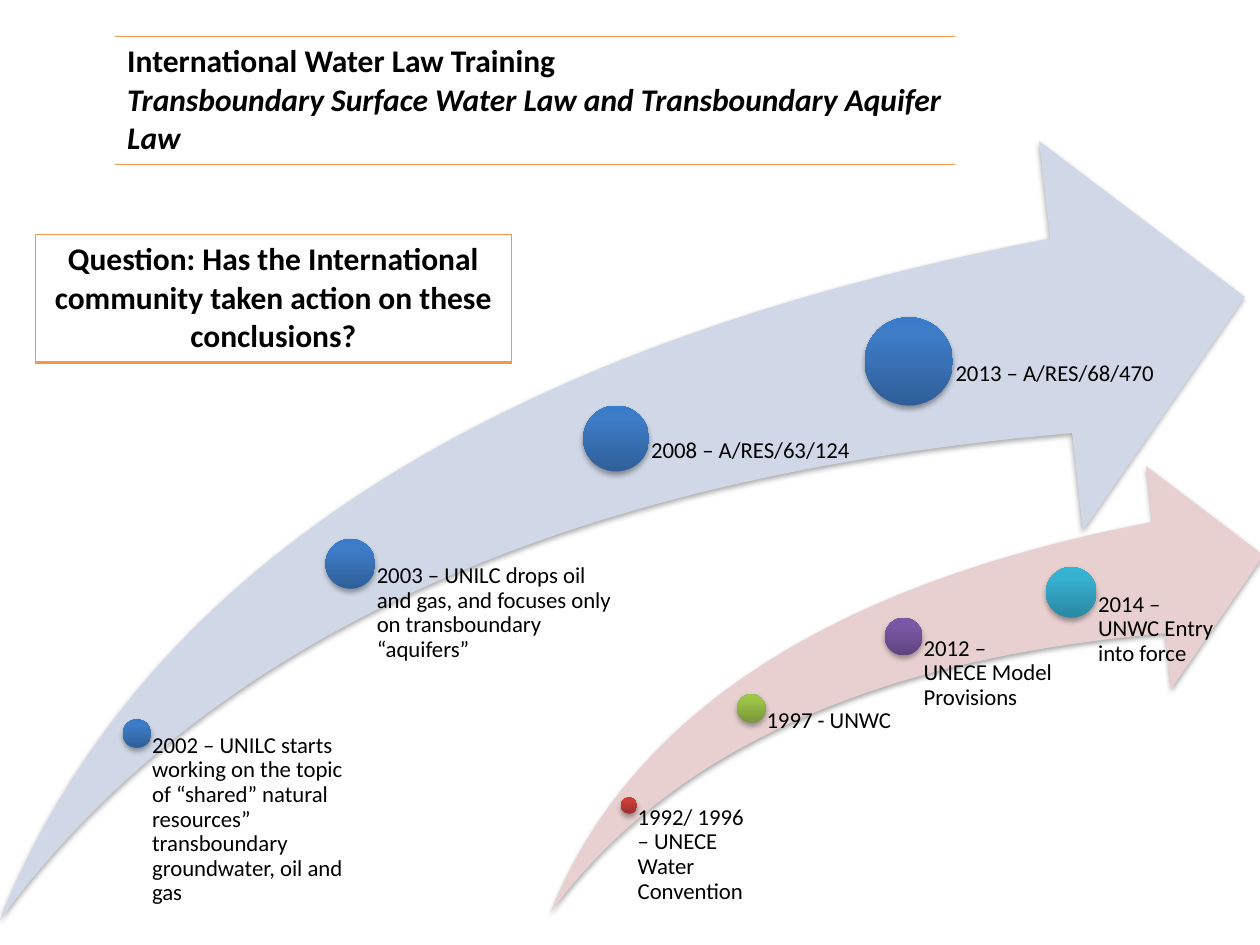
from pptx import Presentation
from pptx.dml.color import RGBColor
from pptx.enum.shapes import MSO_SHAPE as Preset
from pptx.enum.text import MSO_ANCHOR as Anchor, PP_ALIGN as Align
from pptx.oxml import parse_xml
from pptx.oxml.ns import nsdecls
from pptx.util import Inches, Pt

SLIDE_W, SLIDE_H = 10, 7.5
FONT = "Calibri"
ORANGE = "F79646"
BLUE = ("2F5F99", "3D7CC7", "3A7CCB")
RED = ("9C2F2D", "CB3E3A", "CE3B37")
GREEN = ("779737", "9BC348", "9DC746")
PURPLE = ("5F4480", "7B58A6", "7C57A8")
TEAL = ("2A88A2", "37B1D2", "34B4D6")

# Milestone rule, as shares of the arrow: centre x, centre y, dot size, label width
MILESTONES = [
    (0.11, 0.761, 0.023, 0.171),
    (0.2815, 0.543, 0.04, 0.21),
    (0.495, 0.382, 0.053, 0.21),
    (0.73, 0.283, 0.071, 0.21),
]

AQUIFER_STEPS = [
    ("2002 – UNILC starts working on the topic of “shared” natural resources” "
     "transboundary groundwater, oil and gas", BLUE),
    ("2003 – UNILC drops oil and gas, and focuses only on transboundary “aquifers”", BLUE),
    ("2008 – A/RES/63/124", BLUE),
    ("2013 – A/RES/68/470", BLUE),
]
SURFACE_STEPS = [
    ("1992/ 1996 – UNECE Water Convention", RED),
    ("1997 - UNWC", GREEN),
    ("2012 – UNECE Model Provisions", PURPLE),
    ("2014 – UNWC Entry into force", TEAL),
]


def colour(hex_code):
    """Turn a hex string into a colour."""
    return RGBColor.from_string(hex_code)


def write(paragraph, words, size, bold=None, italic=None):
    """Add one black run to a paragraph."""
    run = paragraph.add_run()
    run.text = words
    font = run.font
    font.name, font.size, font.bold, font.italic = FONT, Pt(size), bold, italic
    font.color.rgb = colour("000000")


def add_shadow(shape):
    """Give a shape a soft shadow falling straight down."""
    shape.shadow.inherit = False
    effects = shape._element.spPr.find("{*}effectLst")
    effects.append(parse_xml(
        f'<a:outerShdw {nsdecls("a")} blurRad="{Pt(3.1)}" dist="{Pt(1.8)}" dir="5400000" '
        'rotWithShape="0"><a:srgbClr val="000000"><a:alpha val="35000"/></a:srgbClr>'
        '</a:outerShdw>'))


def shade(shape, tones):
    """Fill a shape with three tones rising from its bottom edge."""
    shape.fill.gradient()
    shape.fill.gradient_angle = 90
    gradient = shape._element.spPr.find("{*}gradFill")
    stops = "".join(f'<a:gs pos="{place}000"><a:srgbClr val="{tone}"/></a:gs>'
                    for place, tone in zip((0, 80, 100), tones))
    gradient.replace(gradient.find("{*}gsLst"),
                     parse_xml(f'<a:gsLst {nsdecls("a")}>{stops}</a:gsLst>'))


def add_milestone(group, centre, dot_size, label_size, label, tones):
    """Place a dot with its label hanging from the dot's centre."""
    x, y = centre
    dot = group.shapes.add_shape(
        Preset.OVAL, *map(Inches, (x - dot_size / 2, y - dot_size / 2, dot_size, dot_size)))
    shade(dot, tones)
    dot.line.fill.background()
    add_shadow(dot)
    frame = group.shapes.add_textbox(*map(Inches, (x, y, *label_size))).text_frame
    frame.word_wrap = True
    frame.vertical_anchor = Anchor.TOP
    frame.margin_left = Inches(0.53 * dot_size)
    frame.margin_top = frame.margin_right = frame.margin_bottom = 0
    frame.paragraphs[0].line_spacing = 0.9
    write(frame.paragraphs[0], label, 13)


def add_timeline(slide, left, top, width, height, tint, steps):
    """Draw a swoosh arrow with milestones along it."""
    group = slide.shapes.add_group_shape()
    arrow = group.shapes.add_shape(
        Preset.SWOOSH_ARROW, *map(Inches, (left, top, width, height)))
    arrow.adjustments[0] = arrow.adjustments[1] = 0.25
    arrow.fill.solid()
    arrow.fill.fore_color.rgb = colour(tint)
    arrow.line.fill.background()
    add_shadow(arrow)
    for (across, down, dot, label_width), (label, tones) in zip(MILESTONES, steps):
        add_milestone(group, (left + across * width, top + down * height), dot * width,
                      (label_width * width, (1 - down) * height), label, tones)


def set_borders(cell, widths):
    """Draw the named cell edges in orange and clear the others."""
    properties = cell._tc.get_or_add_tcPr()
    for place, edge in enumerate("LRTB"):
        paint = (f'<a:solidFill><a:srgbClr val="{ORANGE}"/></a:solidFill>'
                 if edge in widths else "<a:noFill/>")
        properties.insert(place, parse_xml(
            f'<a:ln{edge} {nsdecls("a")} w="{Pt(widths.get(edge, 1))}">{paint}</a:ln{edge}>'))


def add_banner(slide, box, lines, borders, align=Align.LEFT):
    """Add a one-cell table of bold lines, each with its italic setting."""
    table = slide.shapes.add_table(1, 1, *map(Inches, box)).table
    table.first_row = table.horz_banding = False
    cell = table.cell(0, 0)
    cell.fill.background()
    set_borders(cell, borders)
    for index, (words, italic) in enumerate(lines):
        frame = cell.text_frame
        paragraph = frame.add_paragraph() if index else frame.paragraphs[0]
        paragraph.alignment = align
        write(paragraph, words, 18, True, italic)


def main():
    """Build and save the slide."""
    deck = Presentation()
    deck.slide_width, deck.slide_height = Inches(SLIDE_W), Inches(SLIDE_H)
    slide = deck.slides.add_slide(deck.slide_layouts[6])
    add_banner(slide, (0.91, 0.29, 6.67, 1),
               [("International Water Law Training", False),
                ("Transboundary Surface Water Law and Transboundary Aquifer Law", True)],
               {"T": 1, "B": 1})
    add_banner(slide, (0.28, 1.86, 3.78, 1),
               [("Question: Has the International community taken action on these "
                 "conclusions?", False)],
               {"L": 1, "R": 1, "T": 1, "B": 2}, Align.CENTER)
    add_timeline(slide, 0, 1.12, 9.88, 6.18, "D0D8E8", AQUIFER_STEPS)
    add_timeline(slide, 4.37, 3.7, 5.66, 3.54, "E8D0D0", SURFACE_STEPS)
    deck.save("out.pptx")


if __name__ == "__main__":
    main()
